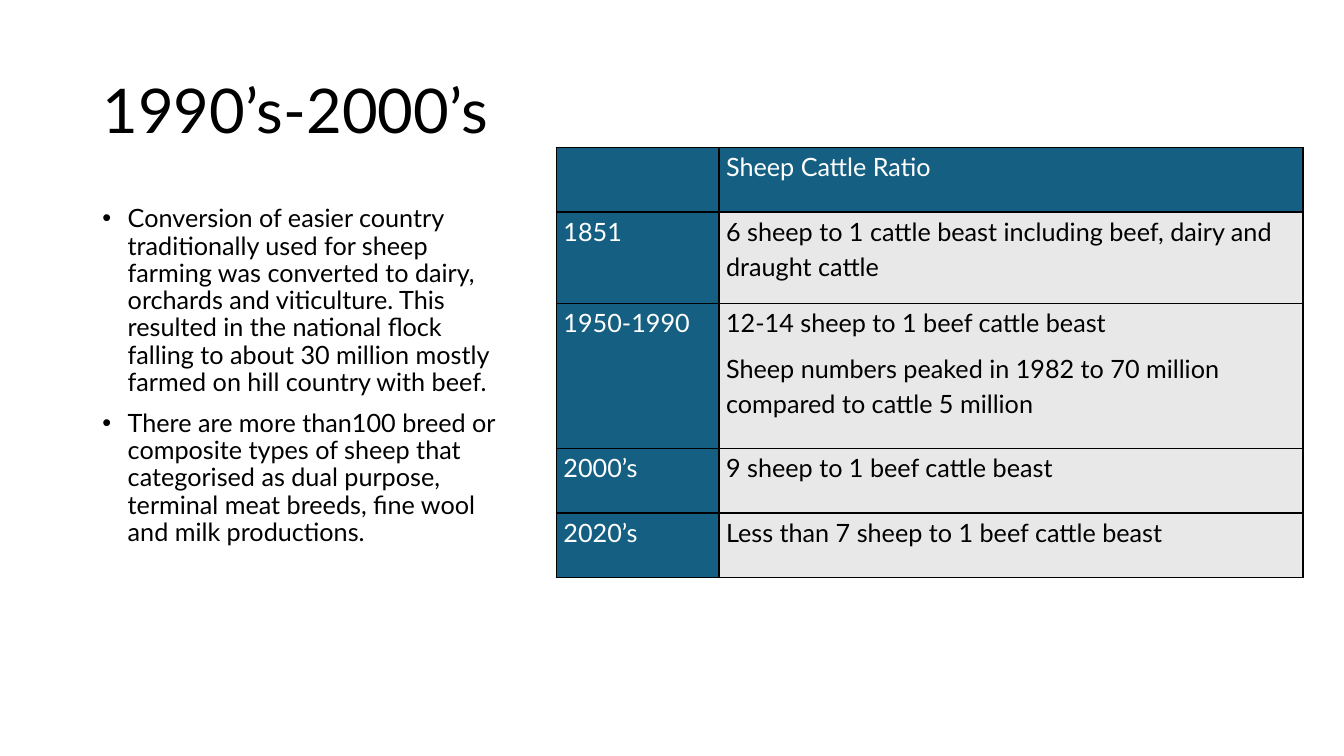
"""Build the slide on sheep farming in the 1990's-2000's."""
from lxml.etree import SubElement
from pptx import Presentation
from pptx.dml.color import RGBColor
from pptx.enum.text import MSO_VERTICAL_ANCHOR as Anchor
from pptx.oxml.ns import qn
from pptx.util import Cm, Pt

TITLE = ["1990’s-2000’s"]
CHANGES = [
    "Conversion of easier country traditionally used for sheep farming was converted to dairy, "
    "orchards and viticulture. This resulted in the national flock falling to about 30 million "
    "mostly farmed on hill country with beef.",
    "There are more than100 breed or composite types of sheep that categorised as dual purpose, "
    "terminal meat breeds, fine wool and milk productions.",
]
RATIOS = [
    ("", ["Sheep Cattle Ratio"]),
    ("1851", ["6 sheep to 1 cattle beast including beef, dairy and draught cattle"]),
    ("1950-1990", ["12-14 sheep to 1 beef cattle beast",
                   "Sheep numbers peaked in 1982 to 70 million compared to cattle 5 million"]),
    ("2000’s", ["9 sheep to 1 beef cattle beast"]),
    ("2020’s", ["Less than 7 sheep to 1 beef cattle beast"]),
]
COLUMN_WIDTHS = [4.1, 14.72]
ROW_HEIGHTS = [1.63, 2.3, 3.66, 1.63, 1.63]
BLACK, WHITE, TEAL, GREY = "000000", "FFFFFF", "156082", "E8E8E8"
BODY_FORMAT = {"line_spacing": 0.9}
CELL_FORMAT = {"line_spacing": 1.15, "space_after": Pt(8)}
CELL_MARGINS = {"margin_left": Cm(0.18), "margin_right": Cm(0.18),
                "margin_top": Cm(0), "margin_bottom": Cm(0)}


def color(hex_value):
    return RGBColor.from_string(hex_value)


def write(frame, lines, size, ink, layout, bulleted=False):
    for index, line in enumerate(lines):
        paragraph = frame.paragraphs[0] if index == 0 else frame.add_paragraph()
        for name, value in layout.items():
            setattr(paragraph, name, value)
        if bulleted:
            if index:
                paragraph.space_before = Pt(10)
            properties = paragraph._p.get_or_add_pPr()
            properties.set("marL", str(Cm(0.64)))
            properties.set("indent", str(-Cm(0.64)))
            SubElement(properties, qn("a:buFont"), typeface="Arial")
            SubElement(properties, qn("a:buChar"), char="•")
        run = paragraph.add_run()
        run.text = line
        for name, value in {"size": Pt(size), "name": "Lato"}.items():
            setattr(run.font, name, value)
        run.font.color.rgb = color(ink)


def add_text(slide, box, lines, size, anchor, bulleted=False):
    frame = slide.shapes.add_textbox(*map(Cm, box)).text_frame
    frame.word_wrap = True
    frame.vertical_anchor = anchor
    write(frame, lines, size, BLACK, BODY_FORMAT, bulleted)


def fill_cell(cell, lines, fill, ink):
    for name, value in CELL_MARGINS.items():
        setattr(cell, name, value)
    if any(lines):
        write(cell.text_frame, lines, 18, ink, CELL_FORMAT)
    properties = cell._tc.get_or_add_tcPr()
    for side in ("lnL", "lnR", "lnT", "lnB"):
        border = SubElement(properties, qn(f"a:{side}"), w=str(Pt(1)))
        SubElement(SubElement(border, qn("a:solidFill")), qn("a:srgbClr"), val=BLACK)
    cell.fill.solid()
    cell.fill.fore_color.rgb = color(fill)


def add_ratios(slide):
    table = slide.shapes.add_table(
        len(RATIOS), len(COLUMN_WIDTHS), Cm(14.02), Cm(3.71),
        Cm(sum(COLUMN_WIDTHS)), Cm(sum(ROW_HEIGHTS))).table
    for column, width in zip(table.columns, COLUMN_WIDTHS):
        column.width = Cm(width)
    for index, (period, ratio) in enumerate(RATIOS):
        table.rows[index].height = Cm(ROW_HEIGHTS[index])
        fill_cell(table.cell(index, 0), [period], TEAL, WHITE)
        ratio_colors = (GREY, BLACK) if index else (TEAL, WHITE)
        fill_cell(table.cell(index, 1), ratio, *ratio_colors)


def main():
    deck = Presentation()
    deck.slide_width, deck.slide_height = Cm(33.87), Cm(19.05)
    slide = deck.slides.add_slide(deck.slide_layouts[6])
    add_text(slide, (2.33, 1.01, 11.33, 3.68), TITLE, 44, Anchor.MIDDLE)
    add_text(slide, (2.33, 5.07, 10.57, 12.09), CHANGES, 18, Anchor.TOP, bulleted=True)
    add_ratios(slide)
    deck.save("out.pptx")


if __name__ == "__main__":
    main()
